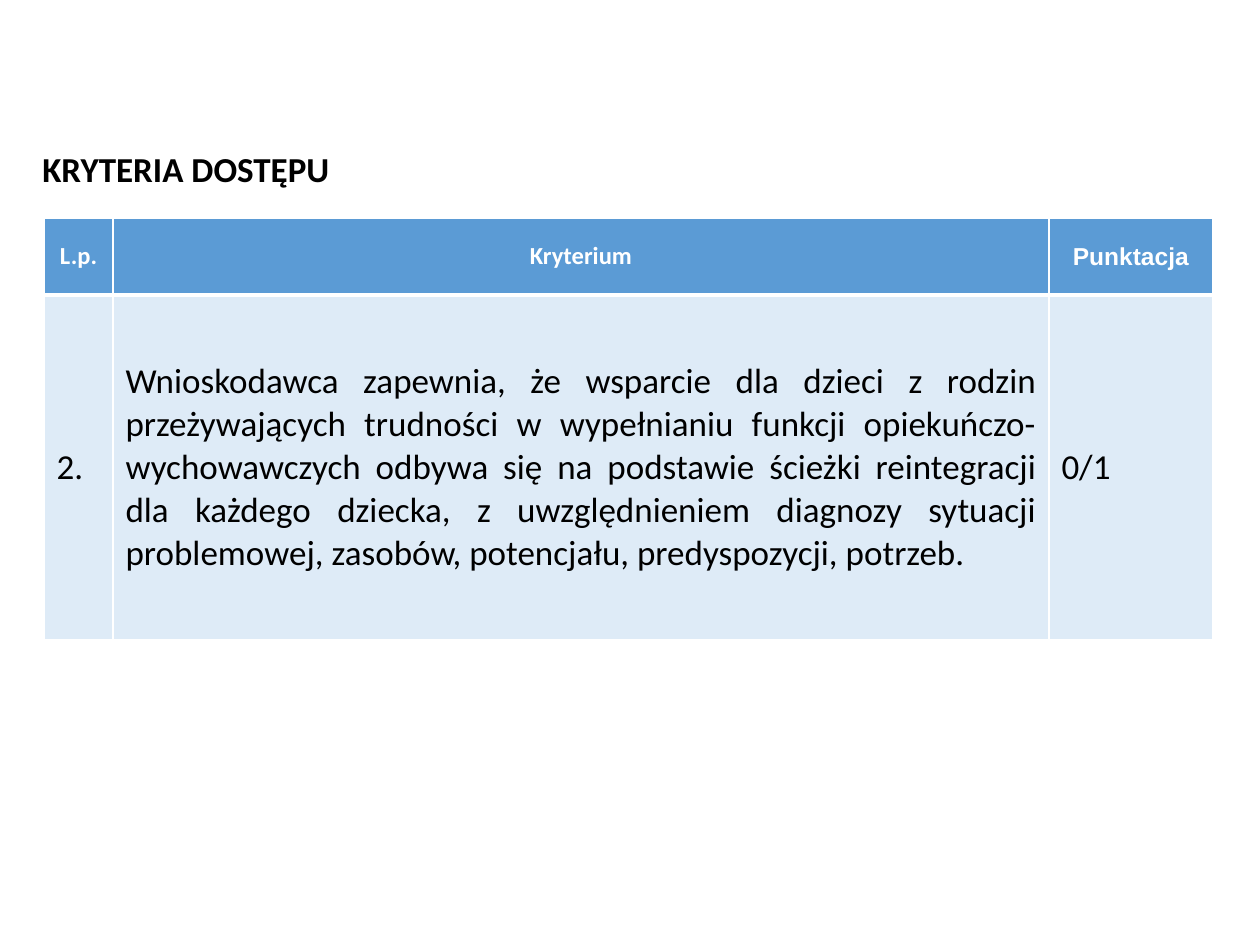
from dataclasses import dataclass

from lxml.etree import SubElement
from pptx import Presentation
from pptx.dml.color import RGBColor as Rgb
from pptx.enum.text import MSO_ANCHOR as Anchor, PP_ALIGN as Align
from pptx.oxml.ns import qn
from pptx.util import Emu, Pt


@dataclass(frozen=True)
class Theme:
    """Colours, fonts and type sizes."""
    ink: str = "000000"
    paper: str = "FFFFFF"
    header: str = "5B9BD5"
    row: str = "DEEBF7"
    main_font: str = "Calibri"
    alt_font: str = "Arial"
    header_size: int = 14
    body_size: int = 20
    thin: int = 1
    thick: int = 3


def px(length):
    """Turn px into EMU."""
    return Emu(round(length * 914400 / 126))


class Deck:
    """Hold the style and the current slide."""

    def __init__(self, theme, width, height):
        """Start a deck with one blank slide."""
        self.theme = theme
        self.prs = Presentation()
        self.prs.slide_width, self.prs.slide_height = px(width), px(height)
        self.slide = self.prs.slides.add_slide(self.prs.slide_layouts[6])

    def set_text(self, frame, text, size, color, bold=False, font=None, align=Align.LEFT):
        """Put one styled paragraph into a text frame."""
        paragraph = frame.paragraphs[0]
        paragraph.text = text
        paragraph.alignment = align
        paragraph.font.name = font or self.theme.main_font
        paragraph.font.size = Pt(size)
        paragraph.font.bold = bold
        paragraph.font.color.rgb = Rgb.from_string(color)

    def heading(self, text, left, top, width, height):
        """Add a bold heading."""
        frame = self.slide.shapes.add_textbox(*map(px, (left, top, width, height))).text_frame
        frame.word_wrap = True
        frame.vertical_anchor = Anchor.MIDDLE
        self.set_text(frame, text, self.theme.body_size, self.theme.ink, bold=True)

    def border(self, cell, **widths):
        """Draw the cell's sides in the paper colour."""
        properties = cell._tc.get_or_add_tcPr()
        for side, width in widths.items():
            line = SubElement(properties, qn(f"a:ln{side}"), w=str(Pt(width)))
            SubElement(SubElement(line, qn("a:solidFill")), qn("a:srgbClr"), val=self.theme.paper)

    def table(self, left, top, columns, rows, header, body):
        """Add a header row and body rows of (text, style) cells."""
        theme = self.theme
        grid = self.slide.shapes.add_table(
            len(rows), len(columns), *map(px, (left, top, sum(columns), sum(rows)))).table
        for column, width in zip(grid.columns, columns):
            column.width = px(width)
        for row, height in zip(grid.rows, rows):
            row.height = px(height)
        for r, contents in enumerate([header, *body]):
            look = (dict(size=theme.header_size, color=theme.paper, bold=True, align=Align.CENTER)
                    if r == 0 else dict(size=theme.body_size, color=theme.ink))
            for c, (text, style) in enumerate(contents):
                cell = grid.cell(r, c)
                self.border(cell, L=theme.thin, R=theme.thin,
                            T=theme.thick if r == 1 else theme.thin,
                            B=theme.thick if r == 0 else theme.thin)
                cell.fill.solid()
                cell.fill.fore_color.rgb = Rgb.from_string(theme.row if r else theme.header)
                cell.vertical_anchor = Anchor.MIDDLE
                self.set_text(cell.text_frame, text, **(look | style))


def main():
    """Build the access criteria slide."""
    theme = Theme()
    deck = Deck(theme, 1260, 945)
    criterion = (
        "Wnioskodawca zapewnia, że wsparcie dla dzieci z rodzin przeżywających trudności "
        "w wypełnianiu funkcji opiekuńczo-wychowawczych odbywa się na podstawie ścieżki "
        "reintegracji dla każdego dziecka, z uwzględnieniem diagnozy sytuacji problemowej, "
        "zasobów, potencjału, predyspozycji, potrzeb.")
    deck.table(
        44, 218, columns=(69, 936, 164), rows=(77, 345),
        header=[("L.p.", {}), ("Kryterium", {}), ("Punktacja", {"font": theme.alt_font})],
        body=[[("2.", {}), (criterion, {"align": Align.JUSTIFY}), ("0/1", {})]])
    deck.heading("KRYTERIA DOSTĘPU", 30, 141, 466, 55)
    deck.prs.save("out.pptx")


if __name__ == "__main__":
    main()
